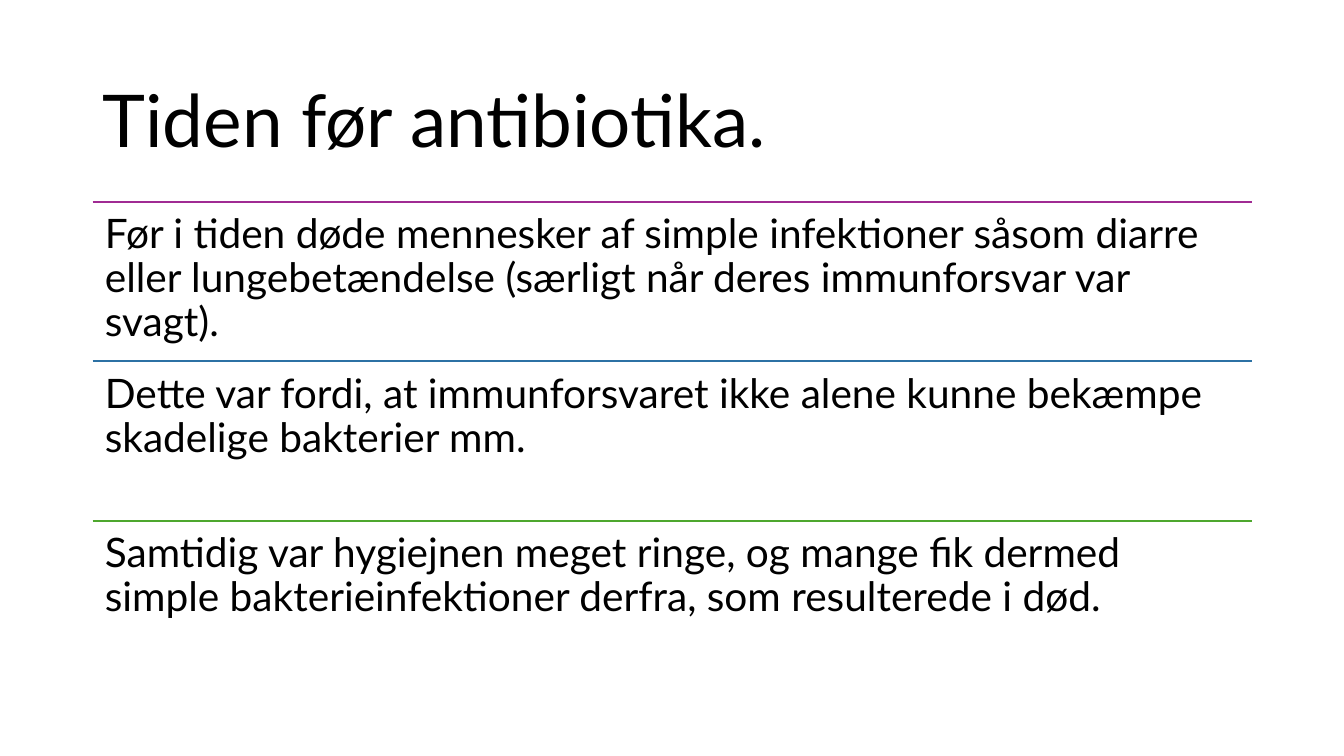
from dataclasses import dataclass

from lxml import etree
from pptx import Presentation
from pptx import util as u
from pptx.dml.color import RGBColor
from pptx.enum import shapes, text
from pptx.oxml.ns import qn


@dataclass(frozen=True)
class Theme:
    """Colours, type and measures of the slide, in points and inches."""
    font: str = "Lato"
    ink: str = "000000"
    rules: tuple = ("A02B93", "2C71A4", "4EA72E")
    title_size: float = 52
    body_size: float = 29
    rule_width: float = 1.5
    left: float = 0.92
    width: float = 11.5
    title_top: float = 0.61
    title_height: float = 1.24
    rows_top: float = 2
    rows_height: float = 4.75


THEME = Theme()
STATEMENTS = (
    "Før i tiden døde mennesker af simple infektioner såsom diarre eller "
    "lungebetændelse (særligt når deres immunforsvar var svagt).",
    "Dette var fordi, at immunforsvaret ikke alene kunne bekæmpe skadelige "
    "bakterier mm.",
    "Samtidig var hygiejnen meget ringe, og mange fik dermed simple "
    "bakterieinfektioner derfra, som resulterede i død.",
)


def apply_format(target, values):
    """Set every attribute named in values on target."""
    for name, value in values.items():
        setattr(target, name, value)


def add_text(slide, wording, top, height, size, anchor, inset_x, inset_y):
    """Add one wrapped paragraph across the content column."""
    box = slide.shapes.add_textbox(
        u.Inches(THEME.left), u.Inches(top), u.Inches(THEME.width), u.Inches(height))
    frame = box.text_frame
    apply_format(frame, {
        "word_wrap": True,
        "auto_size": text.MSO_AUTO_SIZE.NONE,
        "vertical_anchor": anchor,
        "margin_left": u.Inches(inset_x),
        "margin_right": u.Inches(inset_x),
        "margin_top": u.Inches(inset_y),
        "margin_bottom": u.Inches(inset_y),
    })
    paragraph = frame.paragraphs[0]
    apply_format(paragraph, {"line_spacing": 0.9, "alignment": text.PP_ALIGN.LEFT})
    run = paragraph.add_run()
    run.text = wording
    apply_format(run.font, {"name": THEME.font, "size": u.Pt(size)})
    run.font.color.rgb = RGBColor.from_string(THEME.ink)


def add_rule(slide, top, colour):
    """Add a coloured line across the content column."""
    rule = slide.shapes.add_connector(
        shapes.MSO_CONNECTOR.STRAIGHT, u.Inches(THEME.left), u.Inches(top),
        u.Inches(THEME.left + THEME.width), u.Inches(top))
    rule.line.width = u.Pt(THEME.rule_width)
    rule.line.color.rgb = RGBColor.from_string(colour)
    etree.SubElement(rule._element.spPr, qn("a:effectLst"))


def add_statements(slide, statements):
    """Stack the statements in equal rows, each under its own rule."""
    row_height = THEME.rows_height / len(statements)
    for row, (statement, colour) in enumerate(zip(statements, THEME.rules)):
        top = THEME.rows_top + row * row_height
        add_rule(slide, top, colour)
        add_text(slide, statement, top, row_height, THEME.body_size,
                 text.MSO_ANCHOR.TOP, 0.12, 0.12)


def main():
    """Build the slide and save it."""
    deck = Presentation()
    apply_format(deck, {"slide_width": u.Inches(13.33), "slide_height": u.Inches(7.5)})
    slide = deck.slides.add_slide(deck.slide_layouts[6])
    add_text(slide, "Tiden før antibiotika.", THEME.title_top, THEME.title_height,
             THEME.title_size, text.MSO_ANCHOR.MIDDLE, 0.1, 0.05)
    add_statements(slide, STATEMENTS)
    deck.save("out.pptx")


if __name__ == "__main__":
    main()
